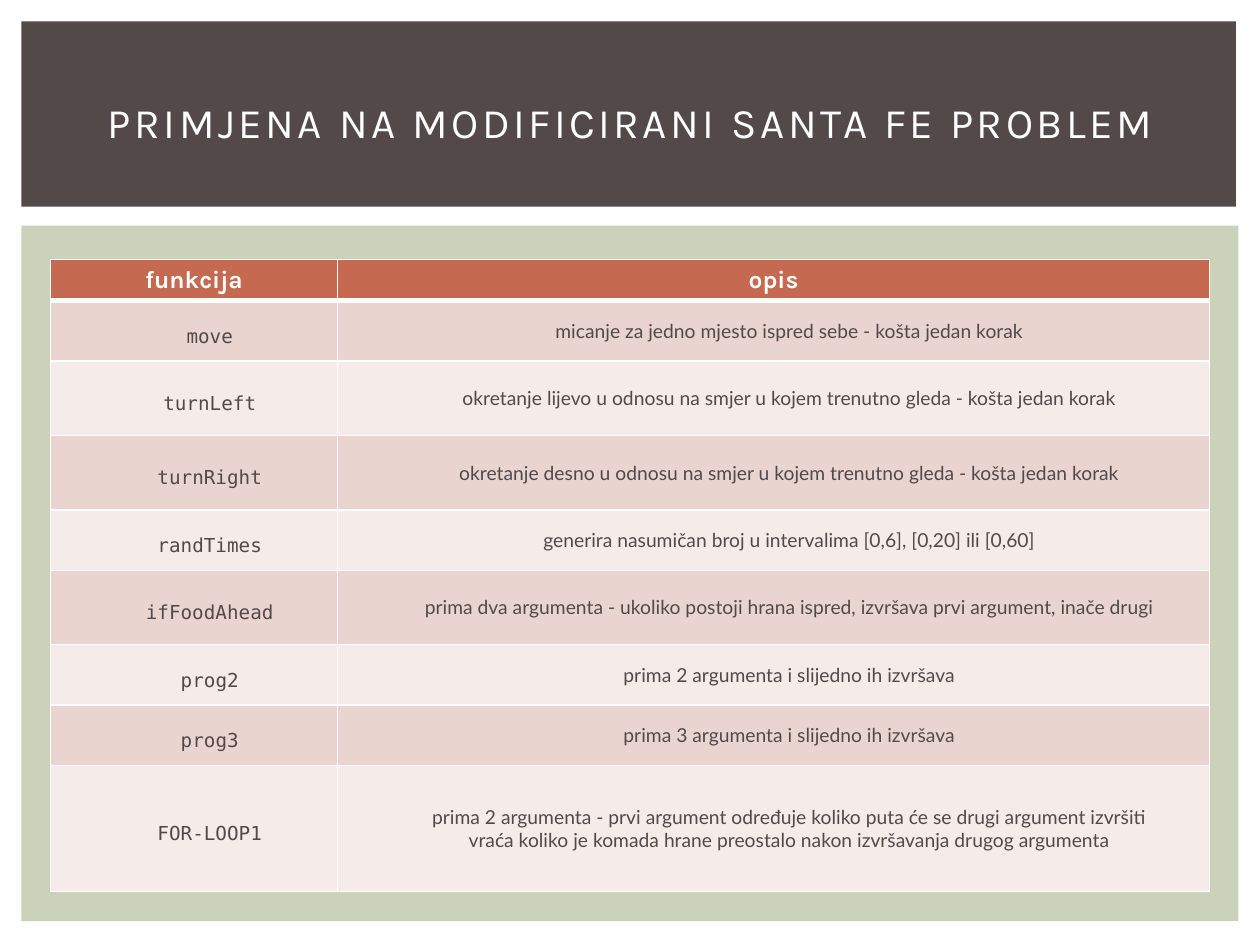
from lxml import etree
from pptx import Presentation
from pptx import util as u
from pptx.dml.color import RGBColor
from pptx.enum import shapes, text
from pptx.oxml.ns import qn

COLORS = {"white": "FFFFFF", "dark": "534949", "sage": "CCD1B9",
          "header": "C66951", "odd": "EAD4D0", "even": "F5EBE9"}
HEADERS = ("funkcija", "opis")
FUNCTIONS = [
    ("move", ["micanje za jedno mjesto ispred sebe - košta jedan korak"]),
    ("turnLeft", ["okretanje lijevo u odnosu na smjer u kojem trenutno gleda - košta jedan korak"]),
    ("turnRight", ["okretanje desno u odnosu na smjer u kojem trenutno gleda - košta jedan korak"]),
    ("randTimes", ["generira nasumičan broj u intervalima [0,6], [0,20] ili [0,60]"]),
    ("ifFoodAhead", ["prima dva argumenta - ukoliko postoji hrana ispred, izvršava prvi argument, inače drugi"]),
    ("prog2", ["prima 2 argumenta i slijedno ih izvršava"]),
    ("prog3", ["prima 3 argumenta i slijedno ih izvršava"]),
    ("FOR-LOOP1", ["prima 2 argumenta - prvi argument određuje koliko puta će se drugi argument izvršiti",
                   "vraća koliko je komada hrane preostalo nakon izvršavanja drugog argumenta"]),
]
COL_WIDTHS = (2.28, 6.92)
ROW_HEIGHTS = (0.31, 0.48, 0.59, 0.59, 0.48, 0.59, 0.48, 0.48, 1)


class SlideBuilder:
    """Holds the text styles and the current slide."""
    styles = {
        "title": {"name": "Karla", "size": u.Pt(24), "bold": False, "color": "white"},
        "header": {"name": "Karla", "size": u.Pt(14), "bold": True, "color": "white"},
        "code": {"name": "DejaVu Sans Mono", "size": u.Pt(11), "bold": False, "color": "dark"},
        "body": {"name": "Lato", "size": u.Pt(11), "bold": False, "color": "dark"},
    }

    def __init__(self, slide):
        self.slide = slide

    def paint(self, fill, color):
        fill.solid()
        fill.fore_color.rgb = RGBColor.from_string(COLORS[color])

    def add_lines(self, tf, lines, style, line_spacing=None, indent=None):
        for i, line in enumerate(lines):
            p = tf.paragraphs[0] if i == 0 else tf.add_paragraph()
            p.alignment = text.PP_ALIGN.CENTER
            if line_spacing:
                p.line_spacing = line_spacing
            if indent:
                p._p.get_or_add_pPr().set("indent", str(indent))
            r = p.add_run()
            r.text = line
            for key, value in self.styles[style].items():
                if key == "color":
                    r.font.color.rgb = RGBColor.from_string(COLORS[value])
                else:
                    setattr(r.font, key, value)

    def panel(self, x, y, w, h, color):
        sp = self.slide.shapes.add_shape(shapes.MSO_SHAPE.RECTANGLE, *map(u.Inches, (x, y, w, h)))
        sp.shadow.inherit = False
        self.paint(sp.fill, color)
        sp.line.fill.background()

    def title(self, x, y, w, h, words):
        sp = self.slide.shapes.title
        sp.left, sp.top, sp.width, sp.height = map(u.Inches, (x, y, w, h))
        tf = sp.text_frame
        tf.word_wrap = True
        tf.auto_size = text.MSO_AUTO_SIZE.NONE
        tf.vertical_anchor = text.MSO_ANCHOR.MIDDLE
        self.add_lines(tf, [words], "title")
        tf.paragraphs[0].runs[0]._r.get_or_add_rPr().set("spc", "200")
        self.slide.shapes._spTree.append(sp._element)  # bring in front of the panels

    def cell(self, cell, lines, style, color, bottom=1, top=1, **layout):
        tcPr = cell._tc.get_or_add_tcPr()
        for side, width in (("L", 1), ("R", 1), ("T", top), ("B", bottom)):
            ln = etree.SubElement(tcPr, qn(f"a:ln{side}"), w=str(u.Pt(width)))
            fill = etree.SubElement(ln, qn("a:solidFill"))
            etree.SubElement(fill, qn("a:srgbClr"), val=COLORS["white"])
        self.paint(cell.fill, color)
        if style != "header":
            margins = {"margin_left": 0.07, "margin_right": 0.07, "margin_top": 0.08, "margin_bottom": 0.08}
            for key, value in margins.items():
                setattr(cell, key, u.Inches(value))
            cell.vertical_anchor = text.MSO_ANCHOR.MIDDLE
        self.add_lines(cell.text_frame, lines, style, **layout)

    def table(self, x, y):
        size = (sum(COL_WIDTHS), sum(ROW_HEIGHTS))
        table = self.slide.shapes.add_table(len(ROW_HEIGHTS), len(COL_WIDTHS),
                                            *map(u.Inches, (x, y, *size))).table
        for col, width in zip(table.columns, COL_WIDTHS):
            col.width = u.Inches(width)
        for row, height in zip(table.rows, ROW_HEIGHTS):
            row.height = u.Inches(height)
        for c, label in enumerate(HEADERS):
            self.cell(table.cell(0, c), [label], "header", "header", bottom=3)
        indent = u.Inches(0.25)
        for n, (name, description) in enumerate(FUNCTIONS, 1):
            band = "odd" if n % 2 else "even"
            top = 3 if n == 1 else 1
            self.cell(table.cell(n, 0), [name], "code", band, top=top, line_spacing=1.5, indent=indent)
            self.cell(table.cell(n, 1), description, "body", band, top=top, indent=indent)


def main():
    prs = Presentation()
    prs.slide_width, prs.slide_height = u.Inches(10), u.Inches(7.5)
    b = SlideBuilder(prs.slides.add_slide(prs.slide_layouts[5]))

    # Background panels
    b.panel(0.17, 1.79, 9.66, 5.52, "sage")
    b.panel(0.17, 0.17, 9.64, 1.47, "dark")

    # Function table
    b.table(0.4, 2.06)

    # Title
    b.title(0.42, 0.39, 9.17, 1.15, "PRIMJENA NA MODIFICIRANI SANTA FE PROBLEM")

    prs.save("out.pptx")


if __name__ == "__main__":
    main()
